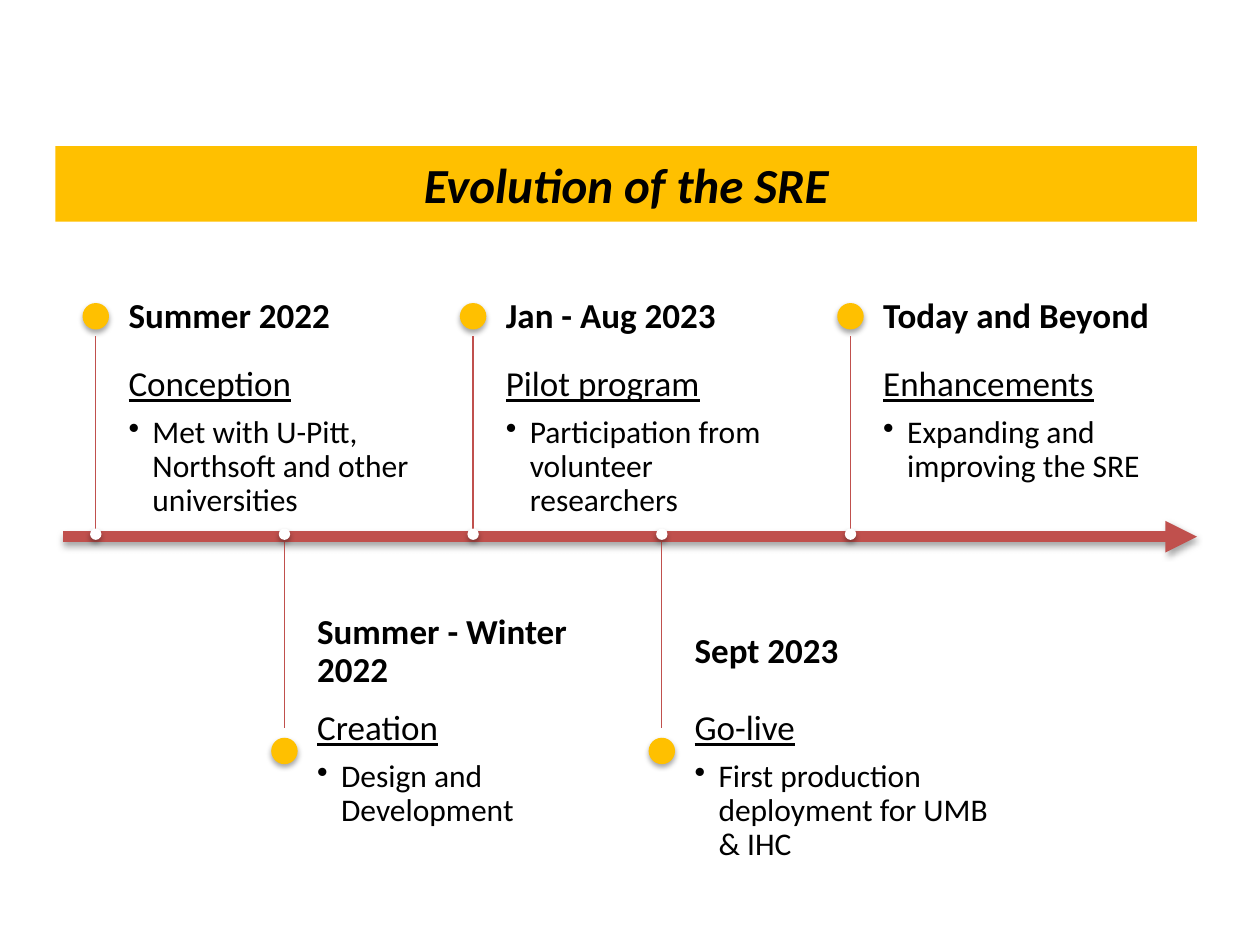
"""Build the timeline slide on the evolution of the SRE."""
from dataclasses import dataclass

from lxml.etree import SubElement
from pptx import Presentation
from pptx.dml.color import RGBColor
from pptx.enum.shapes import MSO_CONNECTOR as Connector, MSO_SHAPE as Preset
from pptx.enum.text import MSO_ANCHOR as Anchor, MSO_AUTO_SIZE as AutoSize, PP_ALIGN as Align
from pptx.oxml.ns import qn
from pptx.util import Inches, Pt

RED, GOLD, WHITE, BLACK = "C0504D", "FFC000", "FFFFFF", "000000"
FIRST_X, PITCH = 0.76, 5.99 / 4
AXIS_Y, STEM_Y = 4.26, 4.24
TEXT_GAP, TEXT_WIDTH = 0.26, 2.49


@dataclass(frozen=True)
class Milestone:
    date: str
    stage: str
    detail: str


@dataclass(frozen=True)
class Side:
    dot_y: float
    stem_end: float
    date_top: float
    date_height: float
    body_top: float
    body_height: float
    body_insets: tuple[float, float, float, float]


ABOVE = Side(2.51, 2.67, 2.26, 0.51, 2.77, 1.47, (0, 0.14, 0.14, 0.21))
BELOW = Side(5.96, 5.78, 4.93, 0.49, 5.43, 0.79, (0, 0.21, 0, 0.14))

MILESTONES = [
    Milestone("Summer 2022", "Conception", "Met with U-Pitt, Northsoft and other universities"),
    Milestone("Summer - Winter 2022", "Creation", "Design and Development"),
    Milestone("Jan - Aug 2023", "Pilot program", "Participation from volunteer researchers"),
    Milestone("Sept 2023", "Go-live", "First production deployment for UMB & IHC"),
    Milestone("Today and Beyond", "Enhancements", "Expanding and improving the SRE"),
]


def color(value: str) -> RGBColor:
    return RGBColor.from_string(value)


def set_effects(shape, shadow: bool) -> None:
    effects = SubElement(shape._element.spPr, qn("a:effectLst"))
    if shadow:
        outer = SubElement(effects, qn("a:outerShdw"), blurRad=str(Pt(3.1)), dist=str(Pt(1.8)),
                           dir="5400000", rotWithShape="0")
        shade = SubElement(outer, qn("a:srgbClr"), val=BLACK)
        SubElement(shade, qn("a:alpha"), val="35000")


def write(paragraph, text: str, *, size: float, bold: bool = False, italic: bool = False,
          underline: bool = False, align=Align.LEFT, line_spacing: float = 0.9,
          space_after: float = 0, bullet: bool = False) -> None:
    paragraph.alignment = align
    paragraph.line_spacing = line_spacing
    paragraph.space_before = Pt(0)
    paragraph.space_after = Pt(space_after)
    if bullet:
        paragraph.level = 1
        properties = paragraph._p.get_or_add_pPr()
        properties.set("marL", str(Inches(0.19)))
        properties.set("indent", str(-Inches(0.19)))
        SubElement(properties, qn("a:buChar"), char="•")
    run = paragraph.add_run()
    run.text = text
    font = run.font
    font.name, font.size = "Calibri", Pt(size)
    font.bold, font.italic, font.underline = bold, italic, underline
    font.color.rgb = color(BLACK)


def add_text_frame(slide, left: float, top: float, height: float,
                   insets: tuple[float, float, float, float], anchor):
    box = slide.shapes.add_textbox(Inches(left), Inches(top), Inches(TEXT_WIDTH), Inches(height))
    frame = box.text_frame
    frame.word_wrap = True
    frame.auto_size = AutoSize.NONE
    frame.vertical_anchor = anchor
    frame.margin_left, frame.margin_top, frame.margin_right, frame.margin_bottom = map(Inches, insets)
    return frame


def add_dot(slide, x: float, y: float, diameter: float, fill: str) -> None:
    dot = slide.shapes.add_shape(Preset.OVAL, Inches(x - diameter / 2), Inches(y - diameter / 2),
                                 Inches(diameter), Inches(diameter))
    dot.fill.solid()
    dot.fill.fore_color.rgb = color(fill)
    dot.line.fill.background()
    set_effects(dot, shadow=True)


def add_line(slide, start: tuple[float, float], end: tuple[float, float], width: float,
             arrow: bool = False) -> None:
    line = slide.shapes.add_connector(Connector.STRAIGHT, *map(Inches, start + end))
    line.line.color.rgb = color(RED)
    line.line.width = Pt(width)
    if arrow:
        SubElement(line.line._get_or_add_ln(), qn("a:tailEnd"), type="triangle")
    set_effects(line, shadow=arrow)


def add_milestone(slide, milestone: Milestone, x: float, side: Side) -> None:
    add_dot(slide, x, side.dot_y, 0.21, GOLD)
    left = x + TEXT_GAP
    body = add_text_frame(slide, left, side.body_top, side.body_height, side.body_insets, Anchor.TOP)
    write(body.paragraphs[0], milestone.stage, size=20, underline=True, space_after=7)
    write(body.add_paragraph(), milestone.detail, size=18, bullet=True)
    date = add_text_frame(slide, left, side.date_top, side.date_height, (0, 0, 0.14, 0), Anchor.MIDDLE)
    write(date.paragraphs[0], milestone.date, size=20, bold=True)
    add_line(slide, (x, STEM_Y), (x, side.stem_end), 0.75)
    add_dot(slide, x, STEM_Y, 0.09, WHITE)


def add_title(slide, text: str) -> None:
    title = slide.shapes.title
    title.left, title.top, title.width, title.height = map(Inches, (0.44, 1.16, 9.06, 0.6))
    title.fill.solid()
    title.fill.fore_color.rgb = color(GOLD)
    title.text_frame.auto_size = AutoSize.NONE
    title.text_frame.vertical_anchor = Anchor.MIDDLE
    write(title.text_frame.paragraphs[0], text, size=28, bold=True, italic=True,
          align=Align.CENTER, line_spacing=1.0)


def main() -> None:
    presentation = Presentation()
    presentation.slide_width, presentation.slide_height = Inches(10), Inches(7.5)
    slide = presentation.slides.add_slide(presentation.slide_layouts.get_by_name("Title Only"))
    add_title(slide, "Evolution of the SRE")
    add_line(slide, (0.5, AXIS_Y), (9.5, AXIS_Y), 6, arrow=True)
    for index, milestone in enumerate(MILESTONES):
        add_milestone(slide, milestone, FIRST_X + index * PITCH, BELOW if index % 2 else ABOVE)
    presentation.save("out.pptx")


if __name__ == "__main__":
    main()
